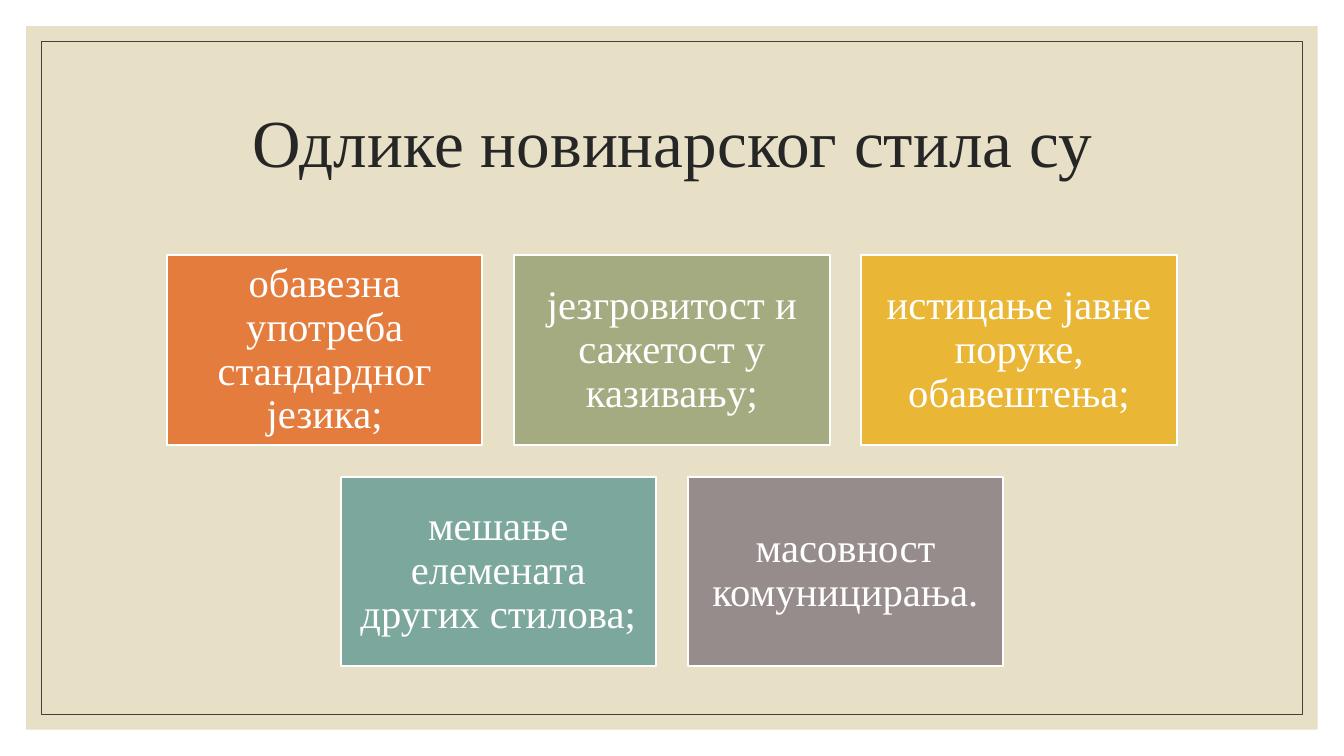
"""Build the slide on the traits of journalistic style."""
from dataclasses import dataclass
from pptx import Presentation
from pptx.dml.color import RGBColor as Rgb
from pptx.enum.shapes import MSO_SHAPE as Kind
from pptx.enum.text import MSO_ANCHOR as Anchor, PP_ALIGN as Align
from pptx.util import Cm, Pt

TITLE = "Одлике новинарског стила су"
ROWS = [
    [
        ("обавезна употреба стандардног језика;", "E37C3D"),
        ("језгровитост и сажетост у казивању;", "A5AB81"),
        ("истицање јавне поруке, обавештења;", "E9B635"),
    ],
    [
        ("мешање елемената других стилова;", "7BA79D"),
        ("масовност комуницирања.", "968C8C"),
    ],
]


@dataclass(frozen=True)
class Theme:
    """Hold the colours, font and type sizes."""
    font: str = "Times New Roman"
    panel: str = "E7E0C7"
    frame: str = "404040"
    ink: str = "262626"
    white: str = "FFFFFF"
    head: int = 48
    body: int = 29


LOOK = Theme()
WIDE, HIGH = 33.87, 19.05
CARD_W, CARD_H, GAP, TOP = 7.95, 4.78, 0.8, 6.43


def add_box(slide, left, top, wide, high, fill=None, line=None, thick=0.5):
    """Draw a flat rectangle."""
    box = slide.shapes.add_shape(
        Kind.RECTANGLE, Cm(left), Cm(top), Cm(wide), Cm(high))
    box.shadow.inherit = False
    if fill:
        box.fill.solid()
        box.fill.fore_color.rgb = Rgb.from_string(fill)
    else:
        box.fill.background()
    if line:
        box.line.color.rgb = Rgb.from_string(line)
        box.line.width = Pt(thick)
    else:
        box.line.fill.background()
    return box


def add_text(shape, text, size, color, pad):
    """Write one centred paragraph into a shape."""
    frame = shape.text_frame
    frame.word_wrap = True
    frame.vertical_anchor = Anchor.MIDDLE
    frame.margin_left = frame.margin_right = Cm(pad)
    frame.margin_top = frame.margin_bottom = Cm(pad)
    para = frame.paragraphs[0]
    para.alignment = Align.CENTER
    para.line_spacing = 0.9
    run = para.add_run()
    run.text = text
    run.font.name = LOOK.font
    run.font.size = Pt(size)
    run.font.color.rgb = Rgb.from_string(color)


def add_inset(slide, inset, **style):
    """Draw a rectangle set in evenly from the slide edges."""
    add_box(slide, inset, inset, WIDE - 2 * inset, HIGH - 2 * inset, **style)


def add_title(slide):
    """Place the title above the panel."""
    title = slide.shapes.title
    slide.shapes._spTree.append(title._element)
    title.left, title.top = Cm(2.97), Cm(1.78)
    title.width, title.height = Cm(27.94), Cm(3.81)
    add_text(title, TITLE, LOOK.head, LOOK.ink, 0.2)


def add_cards(slide):
    """Lay out each row of cards centred on the slide."""
    for row, cards in enumerate(ROWS):
        span = len(cards) * (CARD_W + GAP) - GAP
        top = TOP + row * (CARD_H + GAP)
        for col, (text, fill) in enumerate(cards):
            left = (WIDE - span) / 2 + col * (CARD_W + GAP)
            card = add_box(
                slide, left, top, CARD_W, CARD_H, fill, LOOK.white, 1.5)
            add_text(card, text, LOOK.body, LOOK.white, 0.3)


def main():
    """Build and save the deck."""
    deck = Presentation()
    deck.slide_width, deck.slide_height = Cm(WIDE), Cm(HIGH)
    slide = deck.slides.add_slide(deck.slide_layouts[5])
    add_inset(slide, 0.66, fill=LOOK.panel)
    add_inset(slide, 1.04, line=LOOK.frame)
    add_title(slide)
    add_cards(slide)
    deck.save("out.pptx")


if __name__ == "__main__":
    main()
